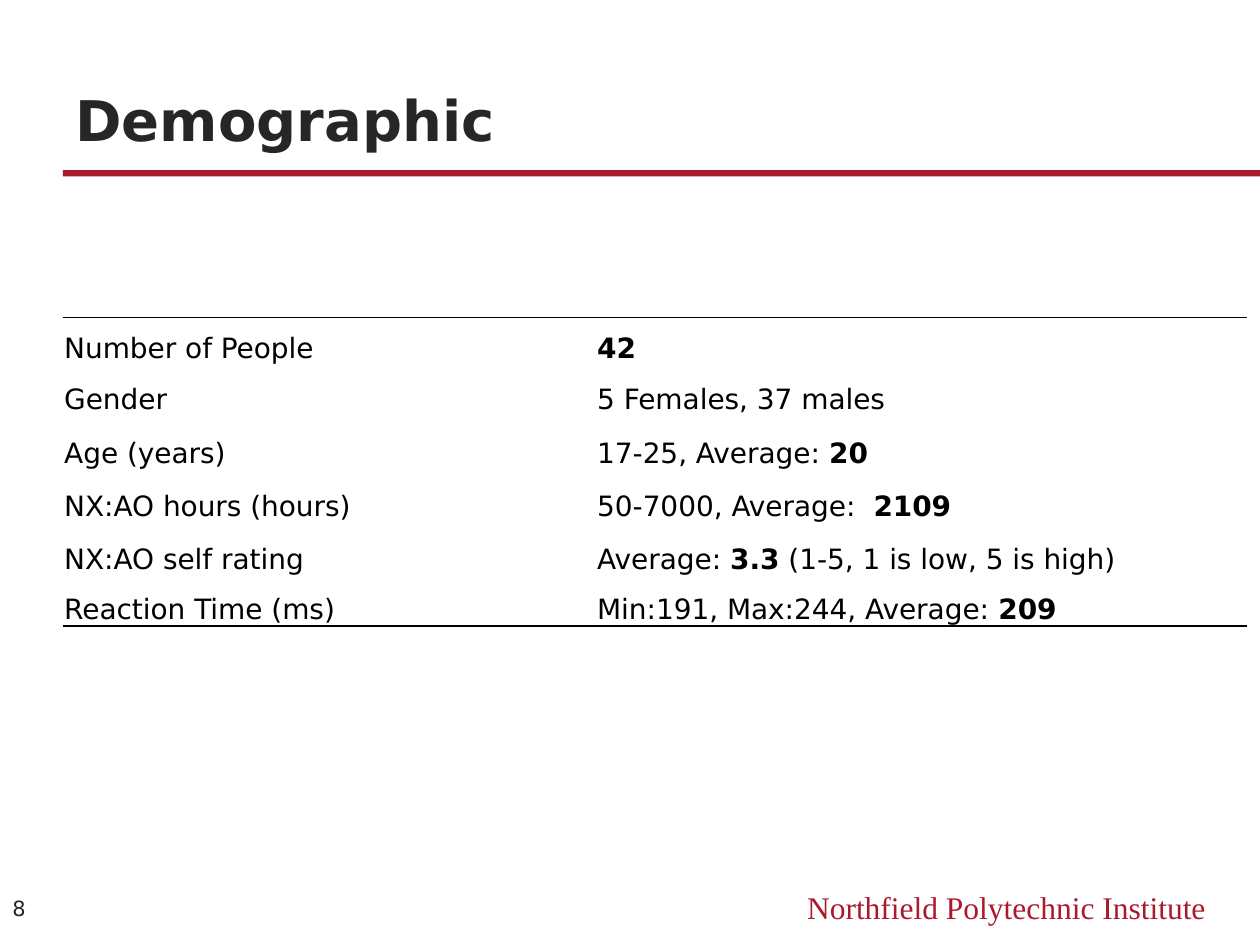
"""Build the demographic summary slide."""
from dataclasses import dataclass

from lxml.etree import SubElement
from pptx import Presentation
from pptx.dml.color import RGBColor
from pptx.enum.shapes import MSO_SHAPE as SHAPE
from pptx.enum.text import MSO_ANCHOR as ANCHOR, PP_ALIGN as ALIGN
from pptx.oxml.ns import qn
from pptx.util import Inches, Pt

RED = RGBColor(0xAB, 0x19, 0x2D)
DARK = RGBColor(0x26, 0x26, 0x26)
BLACK = RGBColor(0, 0, 0)
SANS = "DejaVu Sans"
SERIF = "Times New Roman"
UNIT = 0.5
COLS, ROWS = 20, 15


@dataclass(frozen=True)
class Box:
    """A place on the grid, in columns and rows."""
    col: float
    row: float
    width: float
    height: float

    def lengths(self) -> tuple:
        return tuple(grid(n) for n in (self.col, self.row, self.width, self.height))


@dataclass(frozen=True)
class Fact:
    """A table row; asterisks enclose the bold part of the value."""
    label: str
    value: str
    height: float


FACTS = (
    Fact("Number of People", "*42*", 0.76),
    Fact("Gender", "5 Females, 37 males", 0.8),
    Fact("Age (years)", "17-25, Average: *20*", 0.86),
    Fact("NX:AO hours (hours)", "50-7000, Average:  *2109*", 0.84),
    Fact("NX:AO self rating", "Average: *3.3* (1-5, 1 is low, 5 is high)", 0.84),
    Fact("Reaction Time (ms)", "Min:191, Max:244, Average: *209*", 0.8),
)
TABLE_COLS = (8.46, 10.34)


def grid(n: float) -> int:
    """Turn grid units into a length."""
    return Inches(n * UNIT)


def write(tf, text: str, *, size: float, color: RGBColor, font: str = SANS,
          align=ALIGN.LEFT) -> None:
    """Write one paragraph, with the text between asterisks in bold."""
    p = tf.paragraphs[0]
    p.alignment = align
    for i, part in enumerate(text.split("*")):
        if part:
            r = p.add_run()
            r.text = part
            r.font.name, r.font.size = font, Pt(size)
            r.font.bold = i % 2 == 1
            r.font.color.rgb = color


def add_text(s, box: Box, text: str, *, anchor=ANCHOR.TOP, **style) -> None:
    """Add a wrapped text box."""
    tf = s.shapes.add_textbox(*box.lengths()).text_frame
    tf.word_wrap = True
    tf.vertical_anchor = anchor
    write(tf, text, **style)


def add_bar(s, box: Box, color: RGBColor) -> None:
    """Add a plain filled rectangle."""
    sp = s.shapes.add_shape(SHAPE.RECTANGLE, *box.lengths())
    sp.shadow.inherit = False
    sp.fill.solid()
    sp.fill.fore_color.rgb = color
    sp.line.fill.background()


def set_borders(cell, ruled: str) -> None:
    """Draw a black rule on the sides named and clear the other sides."""
    tc_pr = cell._tc.get_or_add_tcPr()
    for i, side in enumerate("LRTB"):
        ln = SubElement(tc_pr, qn(f"a:ln{side}"), w=str(Pt(1)))
        if side in ruled:
            fill = SubElement(ln, qn("a:solidFill"))
            SubElement(fill, qn("a:srgbClr"), val=str(BLACK))
        else:
            SubElement(ln, qn("a:noFill"))
        tc_pr.insert(i, ln)


def add_facts(s, col: float, row: float, facts: tuple[Fact, ...]) -> None:
    """Add the table, ruled above its first row and below its last."""
    box = Box(col, row, sum(TABLE_COLS), sum(f.height for f in facts))
    table = s.shapes.add_table(len(facts), len(TABLE_COLS), *box.lengths()).table
    table.first_row = table.horz_banding = False
    for column, width in zip(table.columns, TABLE_COLS):
        column.width = grid(width)
    for i, fact in enumerate(facts):
        table.rows[i].height = grid(fact.height)
        ruled = "T" * (i == 0) + "B" * (i == len(facts) - 1)
        for cell, text in zip(table.rows[i].cells, (fact.label, fact.value)):
            cell.fill.background()
            cell.vertical_anchor = ANCHOR.BOTTOM
            cell.margin_left = cell.margin_right = cell.margin_top = Inches(0.01)
            cell.margin_bottom = 0
            write(cell.text_frame, text, size=16, color=BLACK)
            set_borders(cell, ruled)


def main() -> None:
    """Build and save the slide."""
    prs = Presentation()
    prs.slide_width, prs.slide_height = grid(COLS), grid(ROWS)
    s = prs.slides.add_slide(prs.slide_layouts[6])
    add_bar(s, Box(1, 2.7, COLS - 1, 0.1), RED)
    add_text(s, Box(12, 14, 7.34, 0.8), "Northfield Polytechnic Institute",
             size=18, color=RED, font=SERIF, align=ALIGN.RIGHT)
    add_text(s, Box(1, 0.76, 18, 1.76), "*Demographic*",
             size=32, color=DARK, anchor=ANCHOR.BOTTOM)
    add_text(s, Box(0, 13.98, 1, 0.86), "8",
             size=12, color=DARK, anchor=ANCHOR.MIDDLE)
    add_facts(s, 1, 5.04, FACTS)
    prs.save("out.pptx")


if __name__ == "__main__":
    main()
